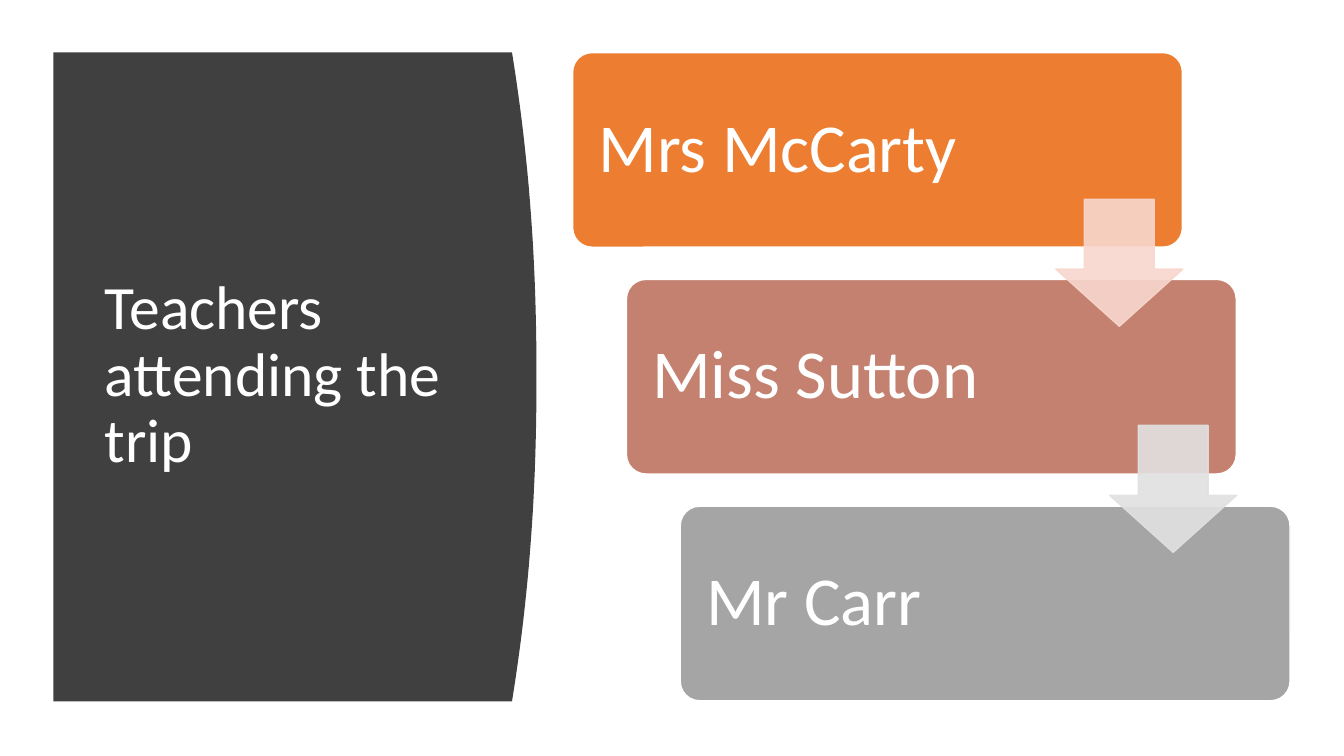
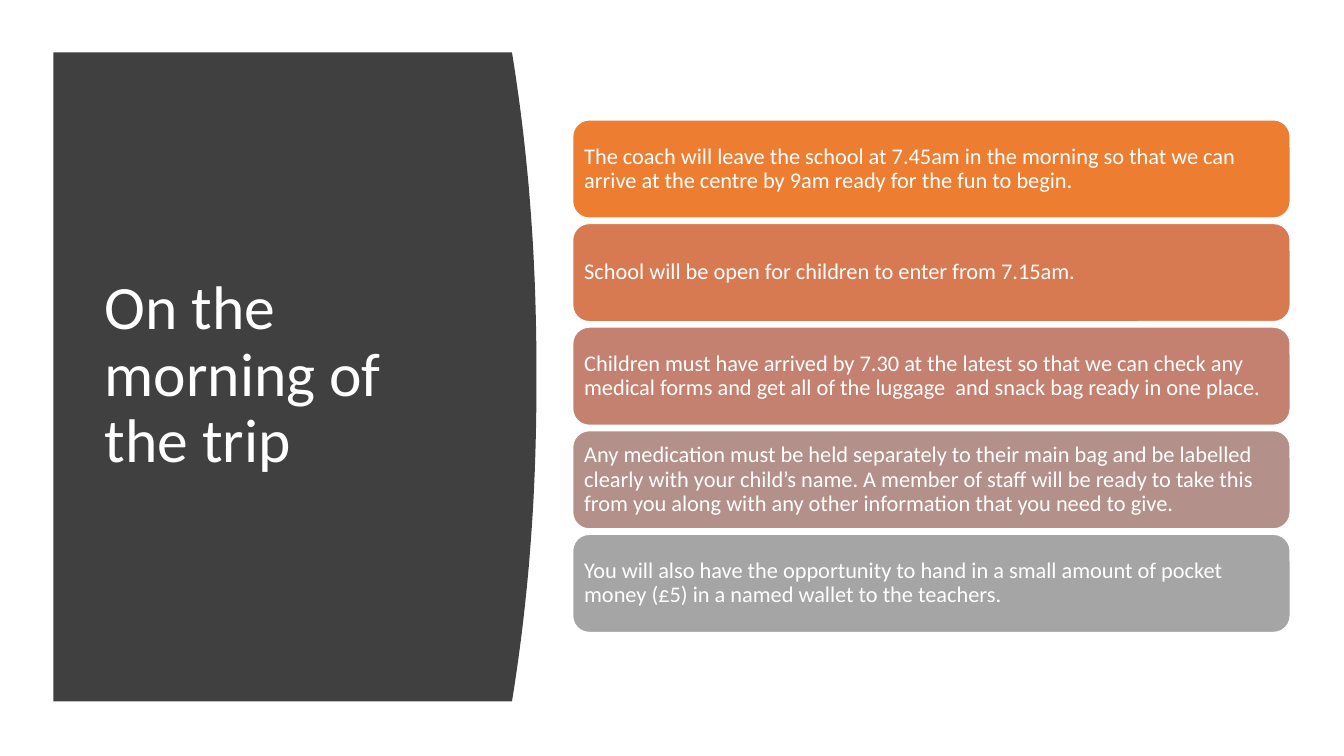
"""Build two school trip slides, each with a curved title panel and coloured boxes."""
from dataclasses import dataclass

from lxml import etree
from pptx import Presentation
from pptx.dml.color import RGBColor
from pptx.enum.shapes import MSO_SHAPE
from pptx.enum.text import MSO_ANCHOR, MSO_AUTO_SIZE, PP_ALIGN
from pptx.oxml.ns import qn
from pptx.util import Pt

ROUND_RECT = MSO_SHAPE.ROUNDED_RECTANGLE
DOWN_ARROW = MSO_SHAPE.DOWN_ARROW
MIDDLE = MSO_ANCHOR.MIDDLE
NO_AUTOFIT = MSO_AUTO_SIZE.NONE
LEFT = PP_ALIGN.LEFT
TITLE_ONLY = 5


@dataclass(frozen=True)
class Theme:
    """Colours, font and type sizes of the deck."""
    font: str = "Calibri"
    white: str = "FFFFFF"
    panel: str = "404040"
    orange: str = "ED7D31"
    copper: str = "D87A51"
    clay: str = "C48170"
    mauve: str = "B4908B"
    grey: str = "A5A5A5"
    peach: str = "F8D7CE"
    silver: str = "E1E1E1"
    title_size: float = 44
    step_size: float = 49
    note_size: float = 16


def set_values(target, values):
    """Set each named attribute on the target."""
    for name, value in values.items():
        setattr(target, name, value)


class Deck:
    """Holds the presentation, the theme and the current slide."""

    def __init__(self, theme):
        """Start a widescreen presentation."""
        self.theme = theme
        self.prs = Presentation()
        set_values(self.prs, {"slide_width": Pt(960), "slide_height": Pt(540)})

    def slide(self, title):
        """Add a slide with its panel and title."""
        self.s = self.prs.slides.add_slide(self.prs.slide_layouts[TITLE_ONLY])
        ph = self.s.shapes.title
        set_values(ph, {"left": Pt(67.7), "top": Pt(80), "width": Pt(269.3), "height": Pt(377.3)})
        self.text(ph, title, self.theme.title_size, 7.2)
        ph.element.addprevious(self.panel().element)

    def panel(self, left=38.2, top=37.4, width=327.5, height=463.7, bulge=17.5, steps=48):
        """Draw the dark panel with a bulging right edge."""
        edge = []
        for i in range(steps + 1):
            t = i / steps
            x = left + width + bulge * (1 - abs(2 * t - 1) ** 2.15)
            edge.append((Pt(x), Pt(top + height * t)))
        outline = self.s.shapes.build_freeform(Pt(left), Pt(top))
        outline.add_line_segments(edge + [(Pt(left), Pt(top + height))], close=True)
        sp = outline.convert_to_shape()
        self.paint(sp, self.theme.panel)
        return sp

    def paint(self, sp, fill, line=None):
        """Give a shape a flat fill and an optional thin outline."""
        sp.shadow.inherit = False
        sp.fill.solid()
        sp.fill.fore_color.rgb = RGBColor.from_string(fill)
        if line:
            sp.line.color.rgb = RGBColor.from_string(line)
            sp.line.width = Pt(1)
        else:
            sp.line.fill.background()

    def text(self, sp, wording, size, inset):
        """Put white, left-aligned, vertically centred text in a shape."""
        tf = sp.text_frame
        sides = ("margin_left", "margin_top", "margin_right", "margin_bottom")
        set_values(tf, {"word_wrap": True, "auto_size": NO_AUTOFIT, "vertical_anchor": MIDDLE})
        set_values(tf, dict.fromkeys(sides, Pt(inset)))
        p = tf.paragraphs[0]
        set_values(p, {"alignment": LEFT, "line_spacing": 0.9})
        r = p.add_run()
        r.text = wording
        set_values(r.font, {"name": self.theme.font, "size": Pt(size)})
        r.font.color.rgb = RGBColor.from_string(self.theme.white)

    def shape(self, kind, box, fill, line, adjustments):
        """Add a painted preset shape."""
        sp = self.s.shapes.add_shape(kind, *map(Pt, box))
        for i, value in enumerate(adjustments):
            sp.adjustments[i] = value
        self.paint(sp, fill, line)
        return sp

    def box(self, box, wording, fill, size, inset, corner):
        """Add a rounded box with text."""
        sp = self.shape(ROUND_RECT, box, fill, self.theme.white, [corner])
        self.text(sp, wording, size, inset)

    def arrow(self, box, color):
        """Add a slightly transparent block arrow pointing down."""
        sp = self.shape(DOWN_ARROW, box, color, color, [0.55, 0.45])
        for clr in list(sp.element.spPr.iter(qn("a:srgbClr"))):
            etree.SubElement(clr, qn("a:alpha"), val="90000")

    def staircase(self, steps, arrow_colors):
        """Add stepped boxes joined by overlapping arrows."""
        for i, (wording, fill) in enumerate(steps):
            box = (409 + 38.45 * i, 37.6 + 162 * i, 435.6, 139)
            self.box(box, wording, fill, self.theme.step_size, 14.4, 0.1)
        for i, color in enumerate(arrow_colors):
            self.arrow((754.2 + 38.45 * i, 142.4 + 161.5 * i, 90.7, 90.7), color)

    def stack(self, notes):
        """Add equal boxes one below the other."""
        for i, (wording, fill) in enumerate(notes):
            box = (409, 85.6 + 74 * i, 512.6, 70.2)
            self.box(box, wording, fill, self.theme.note_size, 4.8, 0.17)


def main():
    """Build and save the deck."""
    theme = Theme()
    deck = Deck(theme)
    deck.slide("Teachers attending the trip")
    deck.staircase(
        [("Mrs McCarty", theme.orange), ("Miss Sutton", theme.clay), ("Mr Carr", theme.grey)],
        [theme.peach, theme.silver],
    )
    deck.slide("On the morning of the trip")
    deck.stack([
        ("The coach will leave the school at 7.45am in the morning so that we can "
         "arrive at the centre by 9am ready for the fun to begin.", theme.orange),
        ("School will be open for children to enter from 7.15am.", theme.copper),
        ("Children must have arrived by 7.30 at the latest so that we can check any "
         "medical forms and get all of the luggage  and snack bag ready in one place.",
         theme.clay),
        ("Any medication must be held separately to their main bag and be labelled "
         "clearly with your child’s name. A member of staff will be ready to take this "
         "from you along with any other information that you need to give.", theme.mauve),
        ("You will also have the opportunity to hand in a small amount of pocket "
         "money (£5) in a named wallet to the teachers.", theme.grey),
    ])
    deck.prs.save("out.pptx")


if __name__ == "__main__":
    main()
